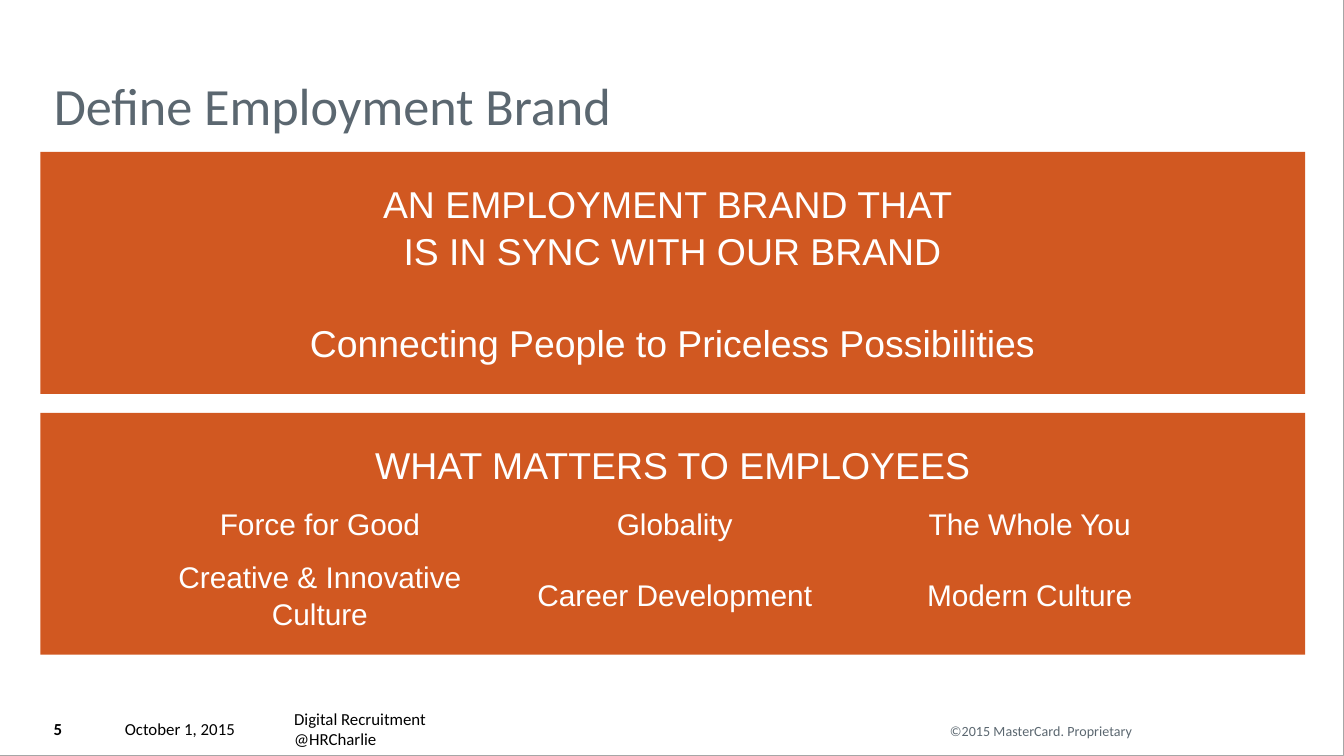
from pptx import Presentation
from pptx.dml.color import RGBColor
from pptx.enum.shapes import MSO_SHAPE
from pptx.enum.text import MSO_ANCHOR, PP_ALIGN
from pptx.util import Pt

# Content
TITLE = "Define Employment Brand"
PROMISE = ["AN EMPLOYMENT BRAND THAT ", "IS IN SYNC WITH OUR BRAND",
           "Connecting People to Priceless Possibilities"]
MATTERS = ["WHAT MATTERS TO EMPLOYEES"]
VALUES = [["Force for Good", "Globality", "The Whole You"],
          ["Creative & Innovative Culture", "Career Development", "Modern Culture"]]
COPYRIGHT = "©2015 MasterCard. Proprietary"
# Footer: text, left, width, bold
FOOTER = [("5", 21.6, 27.4, True),
          ("October 1, 2015", 59.8, 84.2, False),
          ("Digital Recruitment\v@HRCharlie", 150.5, 273.6, False)]

# Style
ORANGE, SLATE, WHITE, BLACK, GREY = "D15821", "5B6770", "FFFFFF", "000000", "A6A6A6"
WIDTH, HEIGHT = 720, 405
BAND_LEFT, BAND_WIDTH, BAND_HEIGHT = 21.6, 677.5, 129.6
PROMISE_TOP, MATTERS_TOP = 81.4, 221.2
VALUE_LEFT, VALUE_TOP, VALUE_WIDTH, VALUE_HEIGHT = 82.1, 265, 178.6, 30.2
COLUMN_STEP, ROW_STEP = 190.1, 38.2


def color(value):
    return RGBColor.from_string(value)


def write(shape, lines, size, ink, font="Arial", align=PP_ALIGN.CENTER,
          anchor=MSO_ANCHOR.MIDDLE, spacing=1.0, bold=False):
    frame = shape.text_frame
    frame.word_wrap = True
    frame.vertical_anchor = anchor
    for index, line in enumerate(lines):
        paragraph = frame.paragraphs[0] if index == 0 else frame.add_paragraph()
        paragraph.text = line
        paragraph.alignment = align
        paragraph.line_spacing = spacing
        for run in paragraph.runs:
            run.font.name, run.font.size, run.font.bold = font, Pt(size), bold
            run.font.color.rgb = color(ink)
    return frame


def add_block(kind, left, top, width, height):
    block = slide.shapes.add_shape(kind, Pt(left), Pt(top), Pt(width), Pt(height))
    block.shadow.inherit = False
    block.fill.solid()
    block.fill.fore_color.rgb = color(ORANGE)
    block.line.fill.background()
    return block


def add_band(top, lines):
    band = add_block(MSO_SHAPE.PENTAGON, BAND_LEFT, top, BAND_WIDTH, BAND_HEIGHT)
    band.adjustments[0] = 0
    frame = write(band, lines, 20, WHITE, anchor=MSO_ANCHOR.TOP, spacing=1.05)
    frame.margin_top = Pt(14.5)
    return frame


def add_note(text, left, top, width, size, ink, align=PP_ALIGN.LEFT,
             spacing=1.0, bold=False):
    note = slide.shapes.add_textbox(Pt(left), Pt(top), Pt(width), Pt(10))
    frame = write(note, [text], size, ink, "Calibri", align, spacing=spacing, bold=bold)
    frame.margin_top = frame.margin_bottom = 0


presentation = Presentation()
presentation.slide_width, presentation.slide_height = Pt(WIDTH), Pt(HEIGHT)
slide = presentation.slides.add_slide(presentation.slide_layouts[5])

# Page border
border = slide.shapes.add_shape(MSO_SHAPE.RECTANGLE, 0, 0, Pt(WIDTH), Pt(HEIGHT))
border.shadow.inherit = False
border.fill.background()
border.line.color.rgb = color(GREY)
border.line.width = Pt(0.5)

# Title
title = slide.shapes.title
title.left, title.top, title.width, title.height = Pt(21.6), Pt(34.6), Pt(584), Pt(38.2)
title_frame = write(title, [TITLE], 28, SLATE, "Calibri", PP_ALIGN.LEFT,
                    MSO_ANCHOR.BOTTOM, 0.8)
title_frame.margin_bottom = 0

# Bands
promise = add_band(PROMISE_TOP, PROMISE)
promise.paragraphs[-1].space_before = Pt(24)
add_band(MATTERS_TOP, MATTERS)

# Grid of employee values
for row, names in enumerate(VALUES):
    for column, name in enumerate(names):
        value = add_block(MSO_SHAPE.RECTANGLE, VALUE_LEFT + column * COLUMN_STEP,
                          VALUE_TOP + row * ROW_STEP, VALUE_WIDTH, VALUE_HEIGHT)
        write(value, [name], 16, WHITE, spacing=1.05)

# Footer
for text, left, width, bold in FOOTER:
    add_note(text, left, 386, width, 9, BLACK, spacing=0.95, bold=bold)
add_note(COPYRIGHT, 434.2, 386.6, 179.3, 7.5, SLATE, PP_ALIGN.RIGHT)

presentation.save("out.pptx")
